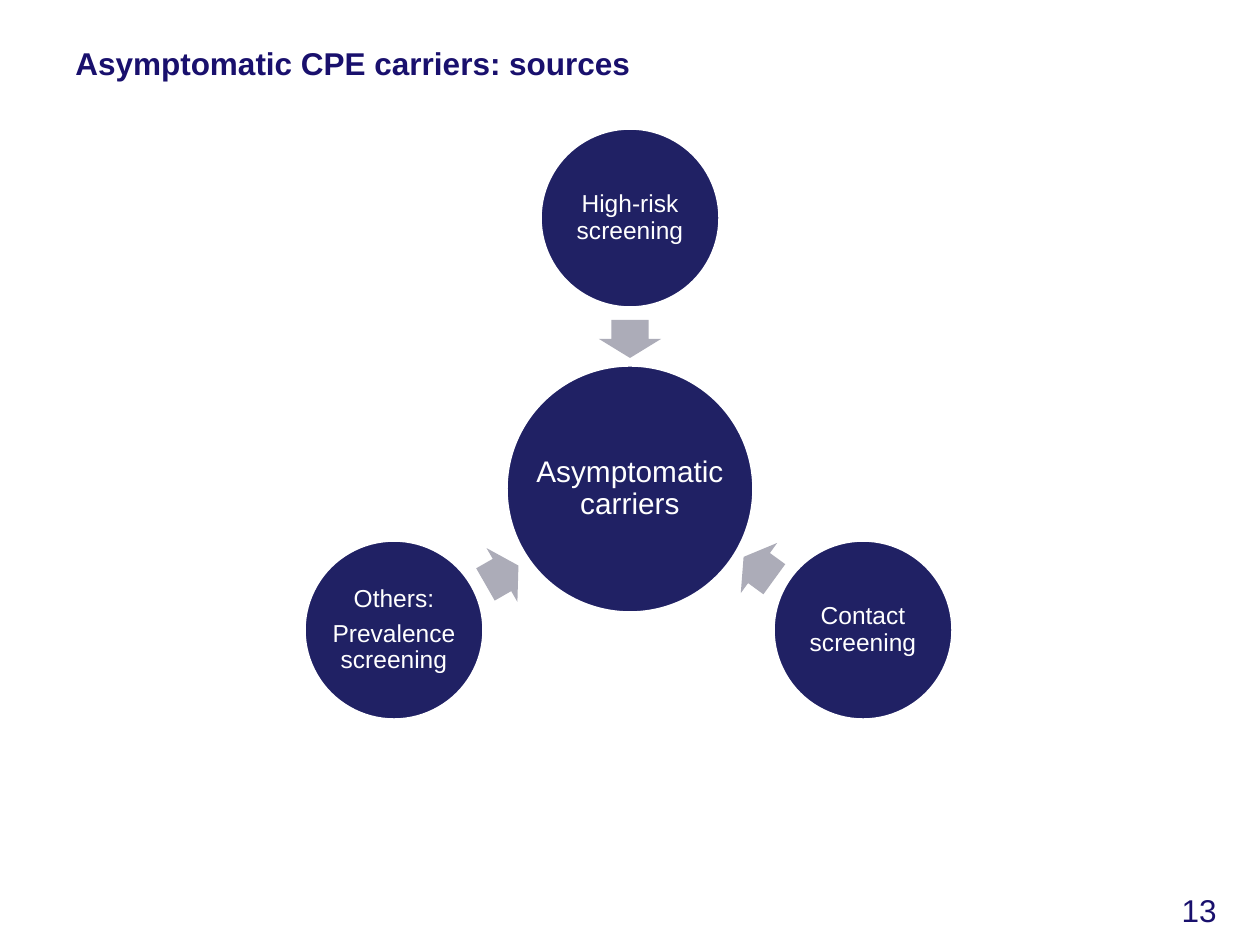
from dataclasses import dataclass

from pptx import Presentation
from pptx.dml.color import RGBColor
from pptx.enum.shapes import MSO_SHAPE
from pptx.enum.text import MSO_ANCHOR, PP_ALIGN
from pptx.util import Emu, Pt

EMU_PER_PX = 914400 / 126
COLORS = {"circle": "202164", "arrow": "ACACB8", "heading": "19106D", "white": "FFFFFF"}
ARROW_LENGTH, ARROW_WIDTH = 38, 62
TEXT_INSET = 24
OVAL_INSET_RATIO = 0.15  # an oval's text area already starts this far in


@dataclass
class Circle:
    center_x: int
    center_y: int
    diameter: int
    font_size: int
    paragraphs: tuple[str, ...]


@dataclass
class Arrow:
    center_x: int
    center_y: int
    rotation: float


@dataclass
class Label:
    left: int
    top: int
    width: int
    height: int
    text: str
    bold: bool
    wrap: bool
    alignment: PP_ALIGN


CIRCLES = [
    Circle(630, 489, 248, 17, ("Asymptomatic carriers",)),
    Circle(630, 218, 180, 14, ("High-risk screening",)),
    Circle(863, 630, 180, 14, ("Contact screening",)),
    Circle(394, 630, 180, 14, ("Others:", "Prevalence screening")),
]
ARROWS = [Arrow(630, 339, 90), Arrow(759, 568, 216), Arrow(502, 575, 330.2)]
LABELS = [
    Label(63, 38, 910, 77, "Asymptomatic CPE carriers: sources", True, True, PP_ALIGN.LEFT),
    Label(1169, 885, 60, 50, "13", False, False, PP_ALIGN.RIGHT),
]


def px(value: float) -> Emu:
    return Emu(round(value * EMU_PER_PX))


def color(name: str) -> RGBColor:
    return RGBColor.from_string(COLORS[name])


def apply(target, values: dict) -> None:
    for name, value in values.items():
        setattr(target, name, value)


def write(frame, texts: tuple[str, ...], font: dict, color_name: str, layout: dict) -> None:
    """Fill a text frame, one paragraph for each text."""
    for index, text in enumerate(texts):
        paragraph = frame.add_paragraph() if index else frame.paragraphs[0]
        run = paragraph.add_run()
        run.text = text
        apply(paragraph, layout)
        apply(run.font, {"name": "Arial", **font})
        run.font.color.rgb = color(color_name)


def add_centered(slide, kind, center: tuple[int, int], size: tuple[int, int], fill: str):
    """Add a filled preset shape around its center point."""
    (x, y), (width, height) = center, size
    shape = slide.shapes.add_shape(
        kind, px(x - width / 2), px(y - height / 2), px(width), px(height))
    shape.shadow.inherit = False
    shape.fill.solid()
    shape.fill.fore_color.rgb = color(fill)
    return shape


def draw_circle(slide, circle: Circle) -> None:
    shape = add_centered(slide, MSO_SHAPE.OVAL, (circle.center_x, circle.center_y),
                         (circle.diameter, circle.diameter), "circle")
    shape.line.color.rgb = color("white")
    shape.line.width = Pt(2)
    inset = px(TEXT_INSET - OVAL_INSET_RATIO * circle.diameter)
    sides = ("left", "top", "right", "bottom")
    apply(shape.text_frame, {f"margin_{side}": inset for side in sides})
    apply(shape.text_frame, {"word_wrap": True, "vertical_anchor": MSO_ANCHOR.MIDDLE})
    write(shape.text_frame, circle.paragraphs, {"size": Pt(circle.font_size)}, "white",
          {"alignment": PP_ALIGN.CENTER, "line_spacing": 0.9, "space_after": Pt(5)})


def draw_arrow(slide, arrow: Arrow) -> None:
    shape = add_centered(slide, MSO_SHAPE.RIGHT_ARROW, (arrow.center_x, arrow.center_y),
                         (ARROW_LENGTH, ARROW_WIDTH), "arrow")
    shape.line.fill.background()
    shape.adjustments[0] = 0.6
    shape.adjustments[1] = 0.5
    shape.rotation = arrow.rotation


def draw_label(slide, label: Label) -> None:
    box = slide.shapes.add_textbox(
        px(label.left), px(label.top), px(label.width), px(label.height))
    box.text_frame.word_wrap = label.wrap
    write(box.text_frame, (label.text,), {"size": Pt(18), "bold": label.bold}, "heading",
          {"alignment": label.alignment})


def main() -> None:
    presentation = Presentation()
    presentation.slide_width, presentation.slide_height = px(1260), px(945)
    slide = presentation.slides.add_slide(presentation.slide_layouts[6])
    for circle in CIRCLES:
        draw_circle(slide, circle)
    for arrow in ARROWS:
        draw_arrow(slide, arrow)
    for label in LABELS:
        draw_label(slide, label)
    presentation.save("out.pptx")


if __name__ == "__main__":
    main()
